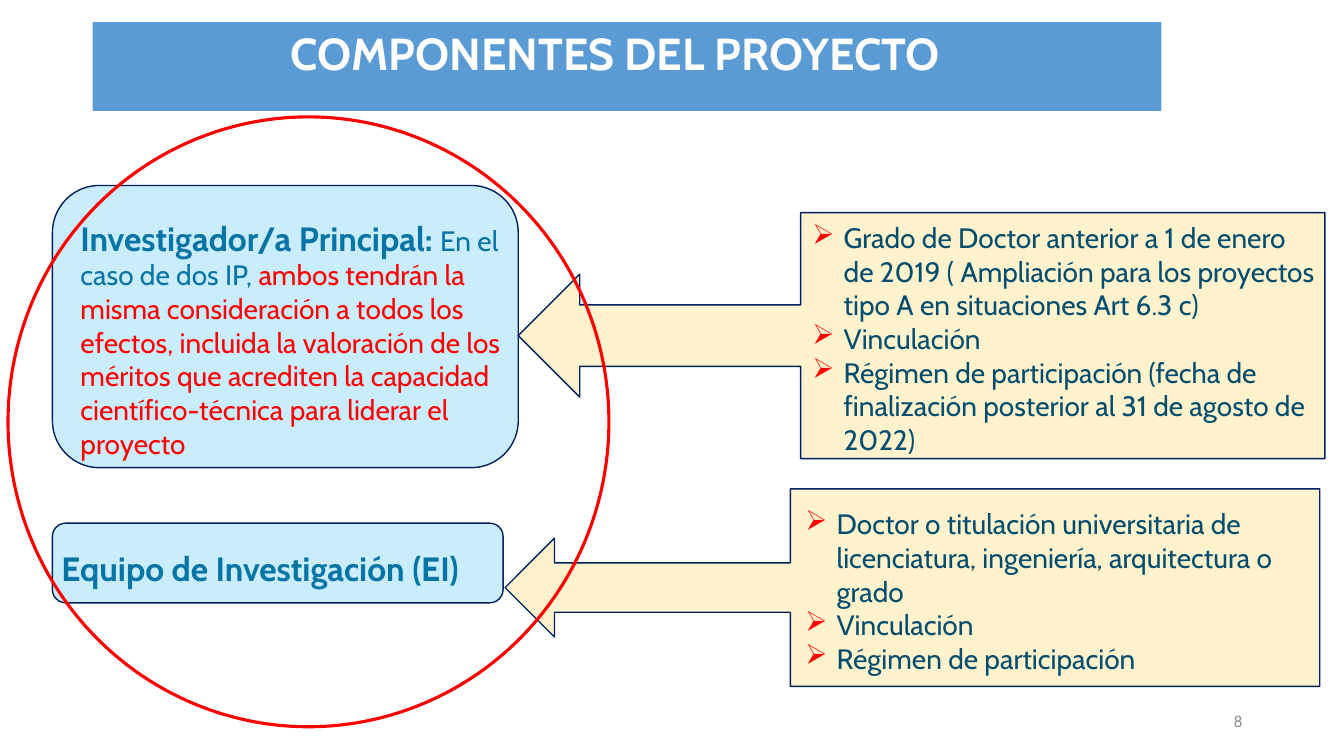
from dataclasses import dataclass
from typing import Optional

from lxml.etree import SubElement
from pptx import Presentation
from pptx.dml.color import RGBColor
from pptx.enum.shapes import MSO_SHAPE
from pptx.enum.text import MSO_ANCHOR, MSO_AUTO_SIZE, PP_ALIGN
from pptx.oxml.ns import qn
from pptx.slide import Slide
from pptx.util import Emu, Pt

EMU_PER_PX = 9144
BULLET_INDENT = 31

WHITE = RGBColor(0xFF, 0xFF, 0xFF)
BANNER_BLUE = RGBColor(0x5B, 0x9B, 0xD5)
PALE_BLUE = RGBColor(0xC9, 0xED, 0xFD)
CREAM = RGBColor(0xFF, 0xF2, 0xCC)
NAVY = RGBColor(0x00, 0x20, 0x60)
TEAL = RGBColor(0x07, 0x74, 0xA6)
DARK_TEAL = RGBColor(0x04, 0x4D, 0x6E)
RED = RGBColor(0xFF, 0x00, 0x00)
GREY = RGBColor(0x8C, 0x8C, 0x8C)


@dataclass(frozen=True)
class Box:
    left: int
    top: int
    width: int
    height: int

    def emu(self) -> tuple[Emu, ...]:
        lengths = (self.left, self.top, self.width, self.height)
        return tuple(Emu(length * EMU_PER_PX) for length in lengths)


@dataclass(frozen=True)
class Panel:
    kind: MSO_SHAPE
    box: Box
    fill: Optional[RGBColor] = None
    line: Optional[RGBColor] = NAVY
    line_width: float = 1


@dataclass(frozen=True)
class Span:
    text: str
    size: int = 20
    color: RGBColor = DARK_TEAL
    bold: bool = False
    font: str = "Cabin"


@dataclass(frozen=True)
class Requirements:
    box: Box
    items: tuple[str, ...]


PANELS = (
    Panel(MSO_SHAPE.ROUNDED_RECTANGLE, Box(52, 184, 462, 280), PALE_BLUE),
    Panel(MSO_SHAPE.ROUNDED_RECTANGLE, Box(52, 519, 447, 79), PALE_BLUE),
    Panel(MSO_SHAPE.LEFT_ARROW_CALLOUT, Box(514, 211, 800, 244), CREAM),
    Panel(MSO_SHAPE.LEFT_ARROW_CALLOUT, Box(501, 485, 808, 196), CREAM),
)
BANNER = Panel(MSO_SHAPE.RECTANGLE, Box(92, 22, 1060, 88), BANNER_BLUE, None)
HIGHLIGHT = Panel(MSO_SHAPE.OVAL, Box(8, 116, 596, 605), None, RED, 2.25)

PRINCIPAL_TEXT = [
    Span("Investigador/a Principal: ", 24, TEAL, True),
    Span("En el caso de dos IP, ", color=TEAL),
    Span(
        "ambos tendrán la misma consideración a todos los efectos, "
        "incluida la valoración de los méritos que acrediten la capacidad "
        "científico-técnica para liderar el proyecto",
        color=RED,
    ),
]

REQUIREMENTS = (
    Requirements(
        Box(796, 214, 522, 246),
        (
            "Grado de Doctor anterior a 1 de enero de 2019 "
            "( Ampliación para los proyectos tipo A en situaciones Art 6.3 c)",
            "Vinculación",
            "Régimen de participación (fecha de finalización posterior "
            "al 31 de agosto de 2022)",
        ),
    ),
    Requirements(
        Box(789, 498, 529, 178),
        (
            "Doctor o titulación universitaria de licenciatura, ingeniería, "
            "arquitectura o grado",
            "Vinculación",
            "Régimen de participación",
        ),
    ),
)


def add_panel(slide: Slide, panel: Panel) -> None:
    shape = slide.shapes.add_shape(panel.kind, *panel.box.emu())
    shape.shadow.inherit = False
    if panel.fill is None:
        shape.fill.background()
    else:
        shape.fill.solid()
        shape.fill.fore_color.rgb = panel.fill
    if panel.line is None:
        shape.line.fill.background()
    else:
        shape.line.color.rgb = panel.line
        shape.line.width = Pt(panel.line_width)


def add_bullet(paragraph) -> None:
    properties = paragraph._p.get_or_add_pPr()
    indent = BULLET_INDENT * EMU_PER_PX
    properties.set("marL", str(indent))
    properties.set("indent", str(-indent))
    bullet_color = SubElement(properties, qn("a:buClr"))
    SubElement(bullet_color, qn("a:srgbClr")).set("val", str(RED))
    SubElement(properties, qn("a:buChar")).set("char", "➢")


def add_text(
    slide: Slide,
    box: Box,
    paragraphs: list[list[Span]],
    *,
    align: PP_ALIGN = PP_ALIGN.LEFT,
    anchor: MSO_ANCHOR = MSO_ANCHOR.TOP,
    line_spacing: float = 1.0,
    bulleted: bool = False,
) -> None:
    frame = slide.shapes.add_textbox(*box.emu()).text_frame
    frame.word_wrap = True
    frame.auto_size = MSO_AUTO_SIZE.NONE
    frame.vertical_anchor = anchor
    for index, spans in enumerate(paragraphs):
        paragraph = frame.add_paragraph() if index else frame.paragraphs[0]
        paragraph.alignment = align
        paragraph.line_spacing = line_spacing
        if bulleted:
            add_bullet(paragraph)
        for span in spans:
            run = paragraph.add_run()
            run.text = span.text
            run.font.name = span.font
            run.font.size = Pt(span.size)
            run.font.bold = span.bold
            run.font.color.rgb = span.color


def main() -> None:
    presentation = Presentation()
    presentation.slide_width = Emu(1333 * EMU_PER_PX)
    presentation.slide_height = Emu(750 * EMU_PER_PX)
    slide = presentation.slides.add_slide(presentation.slide_layouts[6])

    add_panel(slide, BANNER)
    add_text(
        slide,
        Box(942, 695, 300, 40),
        [[Span("8", 12, GREY, font="Calibri")]],
        align=PP_ALIGN.RIGHT,
        anchor=MSO_ANCHOR.MIDDLE,
    )
    add_text(
        slide,
        Box(31, 29, 1159, 66),
        [[Span("COMPONENTES DEL PROYECTO", 32, WHITE, True)]],
        align=PP_ALIGN.CENTER,
        line_spacing=0.85,
    )
    for panel in PANELS:
        add_panel(slide, panel)
    add_text(slide, Box(70, 211, 454, 252), [PRINCIPAL_TEXT])
    add_text(
        slide,
        Box(38, 539, 440, 50),
        [[Span("Equipo de Investigación (EI)", 24, TEAL, True)]],
        align=PP_ALIGN.CENTER,
    )
    for requirements in REQUIREMENTS:
        paragraphs = [[Span(item)] for item in requirements.items]
        add_text(slide, requirements.box, paragraphs, bulleted=True)
    add_panel(slide, HIGHLIGHT)

    presentation.save("out.pptx")


if __name__ == "__main__":
    main()
